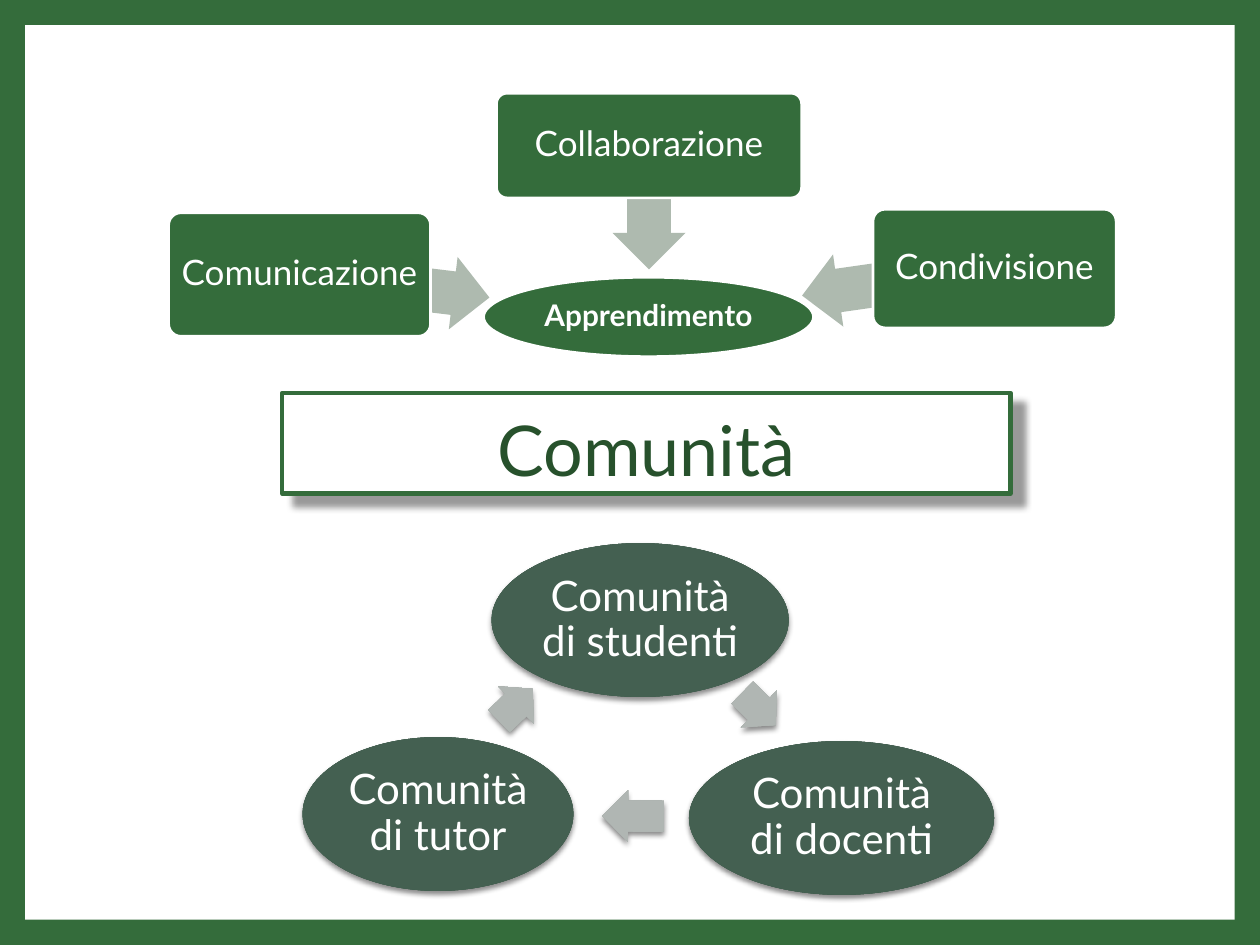
from pptx import Presentation, oxml, util as u
from pptx.dml.color import RGBColor
from pptx.enum import shapes, text
from pptx.oxml import ns
from pptx.util import Cm, Pt

theme = {
    "font": "Lato", "green": "346C3B", "white": "FFFFFF", "title": "27512C",
    "arrow": "AEBAAF", "black": "000000",
    "oval": ("455F51", "446051", "3C5949"),
    "turn": ("B1B6B3", "B0B6B3", "A0A6A2"),
    "hub": 17, "box": 20, "ring": 24, "head": 40,
}
rgb = RGBColor.from_string
kind = shapes.MSO_SHAPE


def write(shape, words, size, color=theme["white"], bold=False, space=0.9, inset=0.04):
    frame = shape.text_frame
    frame.text = words
    pad = u.Inches(inset)
    para = frame.paragraphs[0]
    formats = (
        (frame, {"word_wrap": True, "auto_size": text.MSO_AUTO_SIZE.NONE,
                 "vertical_anchor": text.MSO_ANCHOR.MIDDLE,
                 "margin_left": pad, "margin_right": pad,
                 "margin_top": pad, "margin_bottom": pad}),
        (para, {"alignment": text.PP_ALIGN.CENTER, "line_spacing": space}),
        (para.runs[0].font, {"name": theme["font"], "size": Pt(size), "bold": bold}),
    )
    for item, values in formats:
        for name, value in values.items():
            setattr(item, name, value)
    para.runs[0].font.color.rgb = rgb(color)


def paint(shape, fill, edge=None, width=1.5, shade=None):
    if isinstance(fill, str):
        shape.fill.solid()
        shape.fill.fore_color.rgb = rgb(fill)
    else:
        shape.fill.background()
        stops = "".join(f'<a:gs pos="{pos}"><a:srgbClr val="{color}"/></a:gs>'
                        for pos, color in zip((0, 90000, 100000), fill))
        props = shape._element.spPr
        props.replace(props.find(ns.qn("a:noFill")), oxml.parse_xml(
            f'<a:gradFill {ns.nsdecls("a")}><a:gsLst>{stops}</a:gsLst><a:path path="circle">'
            '<a:fillToRect l="100000" t="100000" r="100000" b="100000"/></a:path></a:gradFill>'))
    if edge:
        shape.line.color.rgb = rgb(edge)
        shape.line.width = Pt(width)
    else:
        shape.line.fill.background()
    shape.shadow.inherit = False
    if shade:
        blur, dist, angle, alpha = shade
        shape._element.spPr.find(ns.qn("a:effectLst")).append(oxml.parse_xml(
            f'<a:outerShdw {ns.nsdecls("a")} blurRad="{Pt(blur)}" dist="{Pt(dist)}" '
            f'dir="{angle * 60000}" rotWithShape="0"><a:srgbClr val="{theme["black"]}">'
            f'<a:alpha val="{alpha * 1000}"/></a:srgbClr></a:outerShdw>'))


deck = Presentation()
deck.slide_width, deck.slide_height = Cm(25.4), Cm(19.05)
slide = deck.slides.add_slide(deck.slide_layouts[5])
slide.background.fill.solid()
slide.background.fill.fore_color.rgb = rgb(theme["green"])

edge = Cm(0.51)
panel = slide.shapes.add_shape(kind.RECTANGLE, edge, edge,
                               deck.slide_width - 2 * edge, deck.slide_height - 2 * edge)
paint(panel, theme["white"])

top = slide.shapes.add_group_shape().shapes
hub = top.add_shape(kind.OVAL, Cm(9.75), Cm(5.59), Cm(6.65), Cm(1.6))
paint(hub, theme["green"], theme["white"])
write(hub, "Apprendimento", theme["hub"], bold=True, inset=0.01)

inputs = (
    ("Comunicazione", (3.4, 4.29, 5.28, 2.49), (6.02, 5.03, 3.86), 186.9),
    ("Collaborazione", (10.01, 1.88, 6.15, 2.11), (11.84, 3.45, 2.49), 270),
    ("Condivisione", (17.6, 4.22, 4.9, 2.39), (16.15, 4.95, 3.91), 351.9),
)
for label, place, way, turn in inputs:
    arrow = top.add_shape(kind.LEFT_ARROW, *map(Cm, way), Cm(1.47))
    arrow.adjustments[0] = 0.6
    arrow.rotation = turn
    paint(arrow, theme["arrow"])
    box = top.add_shape(kind.ROUNDED_RECTANGLE, *map(Cm, place))
    box.adjustments[0] = 0.1
    paint(box, theme["green"], theme["white"])
    write(box, label, theme["box"])

title = slide.shapes.title
slide.shapes._spTree.append(title._element)
for name, value in {"left": 5.69, "top": 7.92, "width": 14.68, "height": 2.03}.items():
    setattr(title, name, Cm(value))
paint(title, theme["white"], theme["green"], 2.5, (4, 9, 42, 40))
write(title, "Comunità", theme["head"], theme["title"], space=1.12, inset=0.05)

ring = slide.shapes.add_group_shape().shapes
soft = (3, 2, 90, 45)
groups = (
    ("studenti", (9.91, 10.95, 5.99), (14.83, 13.77, 0.94), 44.3),
    ("docenti", (13.89, 14.94, 6.15), (12.14, 15.93, 1.24), 180.4),
    ("tutor", (6.1, 14.86, 5.46), (9.93, 13.69, 0.94), 316.2),
)
for label, place, way, turn in groups:
    oval = ring.add_shape(kind.OVAL, *map(Cm, place), Cm(3.1))
    paint(oval, theme["oval"], shade=soft)
    write(oval, f"Comunità di {label}", theme["ring"], inset=0.03)
    arrow = ring.add_shape(kind.RIGHT_ARROW, *map(Cm, way), Cm(1.04))
    arrow.adjustments[0] = 0.6
    arrow.rotation = turn
    paint(arrow, theme["turn"], shade=soft)

deck.save("out.pptx")
